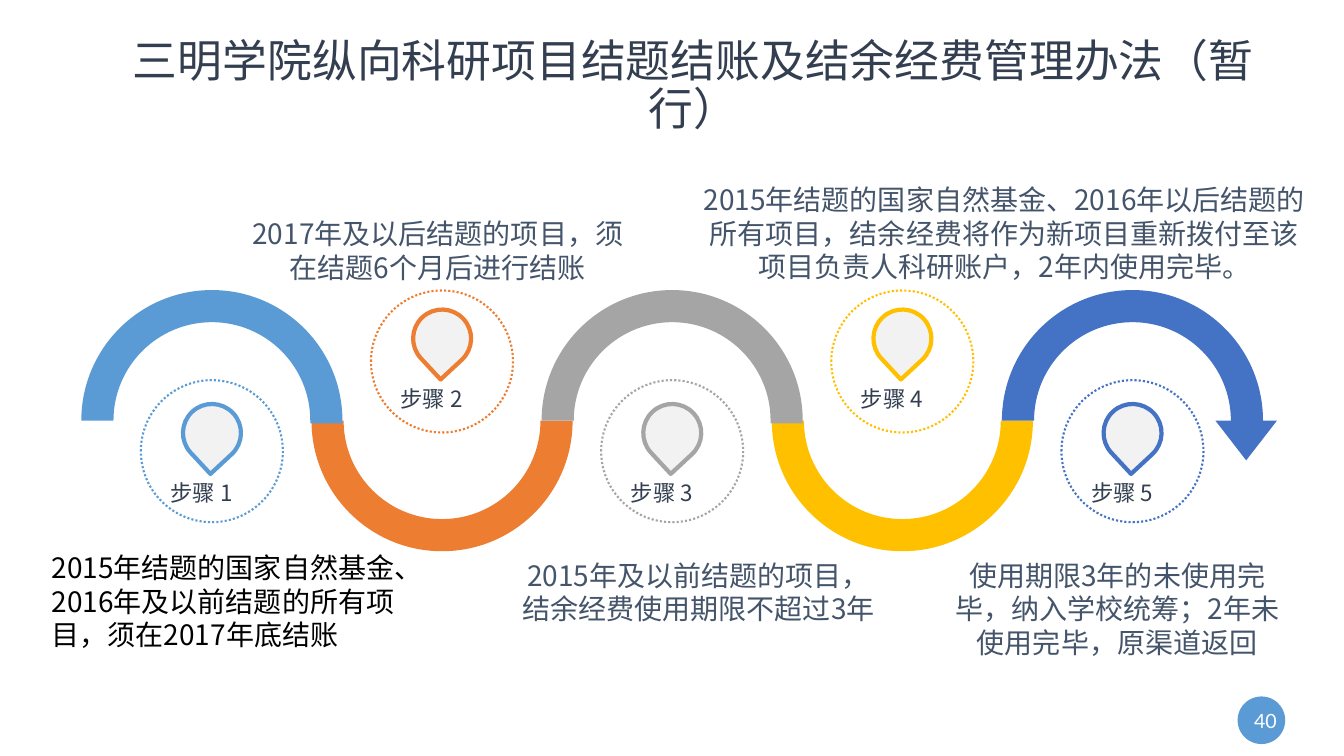
"""Build the five-step wave slide on closing research projects."""
from dataclasses import dataclass
from math import cos, radians, sin

from lxml import etree
from pptx import Presentation
from pptx.dml.color import RGBColor
from pptx.enum.dml import MSO_LINE
from pptx.enum.lang import MSO_LANGUAGE_ID
from pptx.enum.shapes import MSO_SHAPE
from pptx.enum.text import MSO_ANCHOR, MSO_AUTO_SIZE, PP_ALIGN
from pptx.oxml.ns import qn
from pptx.util import Cm, Pt

ELLIPSE = MSO_SHAPE.OVAL
TRIANGLE = MSO_SHAPE.ISOSCELES_TRIANGLE
DOTTED = MSO_LINE.ROUND_DOT
CHINESE = MSO_LANGUAGE_ID.SIMPLIFIED_CHINESE
LEFT, CENTER = PP_ALIGN.LEFT, PP_ALIGN.CENTER
MIDDLE, TOP = MSO_ANCHOR.MIDDLE, MSO_ANCHOR.TOP
FIT_SHAPE, NO_FIT = MSO_AUTO_SIZE.SHAPE_TO_FIT_TEXT, MSO_AUTO_SIZE.NONE


@dataclass(frozen=True)
class Theme:
    """Fonts, type sizes and colours of the slide."""
    font: str = "Noto Sans CJK SC"
    number_font: str = "Lato"
    title_size: int = 32
    caption_size: int = 20
    label_size: int = 16
    number_size: int = 14
    dark: str = "333F50"
    slate: str = "44546A"
    black: str = "000000"
    white: str = "FFFFFF"
    pin_fill: str = "F2F2F2"
    steps: tuple = ("5B9BD5", "ED7D31", "A5A5A5", "FFC000", "4472C4")


THEME = Theme()
STEP_PITCH = 5.8
FIRST_CENTER = 5.34
WAVE_Y = 10.6
OUTER_RADIUS, INNER_RADIUS = 3.29, 2.48
BAND_OVERLAP = 0.07
QUARTER_HANDLE = 0.5523
PIN_RADIUS = 0.73
PIN_TURN = 137.1
DIAL_SIZE = 3.58
LOW_DIAL, HIGH_DIAL = (11.37, 10.91), (9.11, 8.53)
CAPTIONS = (
    ("2015年结题的国家自然基金、2016年及以前结题的所有项目，须在2017年底结账",
     (1.17, 13.74, 9.68, 2.84), THEME.black, LEFT),
    ("2017年及以后结题的项目，须在结题6个月后进行结账",
     (5.89, 5.33, 10.29, 2.0), THEME.slate, CENTER),
    ("2015年及以前结题的项目，结余经费使用期限不超过3年",
     (12.93, 13.94, 9.35, 2.0), THEME.slate, CENTER),
    ("2015年结题的国家自然基金、2016年以后结题的所有项目，结余经费将作为新项目"
     "重新拨付至该项目负责人科研账户，2年内使用完毕。",
     (17.55, 4.47, 15.52, 2.84), THEME.slate, CENTER),
    ("使用期限3年的未使用完毕，纳入学校统筹；2年未使用完毕，原渠道返回",
     (23.67, 13.94, 8.97, 2.84), THEME.slate, CENTER),
)


def write_text(shape, text, *, size, color, font=THEME.font, align=CENTER,
               anchor=TOP, wrap=True, fit=FIT_SHAPE, spacing=None):
    """Put one formatted paragraph into a shape."""
    frame = shape.text_frame
    frame.word_wrap, frame.auto_size, frame.vertical_anchor = wrap, fit, anchor
    frame.margin_left = frame.margin_right = Cm(0.13)
    frame.margin_top = frame.margin_bottom = Cm(0.13)
    paragraph = frame.paragraphs[0]
    paragraph.alignment = align
    paragraph.line_spacing = spacing
    paragraph._p.get_or_add_pPr().set("hangingPunct", "0")
    run = paragraph.add_run()
    run.text = text
    run.font.size = Pt(size)
    run.font.name = font
    run.font.language_id = CHINESE
    run.font.color.rgb = RGBColor.from_string(color)
    etree.SubElement(run.font._element, qn("a:ea")).set("typeface", font)


def add_text(slide, text, box, **style):
    """Add a text box."""
    write_text(slide.shapes.add_textbox(*map(Cm, box)), text, **style)


def paint(shape, fill=None, line=None, width=1.5, dash=None):
    """Set fill and line, and remove the shadow."""
    shape.shadow.inherit = False
    if fill:
        shape.fill.solid()
        shape.fill.fore_color.rgb = RGBColor.from_string(fill)
    else:
        shape.fill.background()
    if line:
        shape.line.color.rgb = RGBColor.from_string(line)
        shape.line.width = Pt(width)
        shape.line.dash_style = dash
    else:
        shape.line.fill.background()


def add_preset(slide, kind, box, **colors):
    """Add a painted preset shape."""
    shape = slide.shapes.add_shape(kind, *map(Cm, box))
    paint(shape, **colors)
    return shape


def quarter_curves(center_x, center_y, radius, start, quarters):
    """Return Bezier triples for quarter turns, negative when anticlockwise."""
    turn = 1 if quarters > 0 else -1
    handle = turn * QUARTER_HANDLE
    curves = []
    for step in range(abs(quarters)):
        first = radians(start + 90 * turn * step)
        last = radians(start + 90 * turn * (step + 1))
        offsets = ((cos(first) - handle * sin(first), sin(first) + handle * cos(first)),
                   (cos(last) + handle * sin(last), sin(last) - handle * cos(last)),
                   (cos(last), sin(last)))
        curves.append([(center_x + radius * x, center_y + radius * y) for x, y in offsets])
    return curves


def add_outline(slide, start, segments, rotation=0, **colors):
    """Add a closed freeform of straight (one point) and curved (three point) segments."""
    points = [(Cm(x), Cm(y)) for segment in segments for x, y in segment]
    builder = slide.shapes.build_freeform(*map(Cm, start), scale=1.0)
    builder.add_line_segments(points, close=True)
    shape = builder.convert_to_shape()
    lines = iter(list(shape._element.iter(qn("a:lnTo"))))
    for segment in segments:
        first, *others = [next(lines) for _ in segment]
        if others:
            first.tag = qn("a:cubicBezTo")
            for line in others:
                first.append(line[0])
                line.getparent().remove(line)
    shape.rotation = rotation
    paint(shape, **colors)


def add_wave_band(slide, center_x, color, lower=False):
    """Add one half ring of the wave, turned over when it is a lower one."""
    center_y = WAVE_Y + OUTER_RADIUS if lower else WAVE_Y
    segments = quarter_curves(center_x, center_y, OUTER_RADIUS, 180, 2)
    if not lower:
        segments += [[(center_x + radius, center_y + BAND_OVERLAP)]
                     for radius in (OUTER_RADIUS, INNER_RADIUS)]
    segments.append([(center_x + INNER_RADIUS, center_y)])
    segments += quarter_curves(center_x, center_y, INNER_RADIUS, 360, -2)
    add_outline(slide, (center_x - OUTER_RADIUS, center_y), segments,
                rotation=180 if lower else 0, fill=color)


def add_wave(slide, centers):
    """Add the lower half rings, the upper ones over them, and the arrowhead."""
    for index in (1, 3, 0, 2, 4):
        add_wave_band(slide, centers[index], THEME.steps[index], lower=index % 2 == 1)
    head = add_preset(slide, TRIANGLE, (30.63, WAVE_Y, 1.55, 1.0), fill=THEME.steps[-1])
    head.rotation = 180


def add_step(slide, number, center_x, color):
    """Add the dotted dial, pin and label of a step."""
    dial_y, pin_y = LOW_DIAL if number % 2 else HIGH_DIAL
    tip = (center_x + PIN_RADIUS, pin_y - PIN_RADIUS)
    pin = quarter_curves(center_x, pin_y, PIN_RADIUS, 0, 3) + [[tip]]
    add_outline(slide, (center_x + PIN_RADIUS, pin_y), pin, rotation=PIN_TURN,
                fill=THEME.pin_fill, line=color, width=3)
    dial = (center_x - DIAL_SIZE / 2, dial_y - DIAL_SIZE / 2, DIAL_SIZE, DIAL_SIZE)
    add_preset(slide, ELLIPSE, dial, line=color, dash=DOTTED)
    add_text(slide, f"步骤 {number}", (center_x - 1.2, pin_y + 1.04, 1.88, 0.94),
             size=THEME.label_size, color=THEME.dark, wrap=False)


def main():
    """Build and save the slide."""
    presentation = Presentation()
    presentation.slide_width, presentation.slide_height = Cm(33.87), Cm(19.05)
    slide = presentation.slides.add_slide(presentation.slide_layouts[5])
    title = slide.shapes.title
    title.left, title.top, title.width, title.height = map(Cm, (2.33, 0.9, 30.3, 2.57))
    write_text(title, "三明学院纵向科研项目结题结账及结余经费管理办法（暂行）",
               size=THEME.title_size, color=THEME.dark, anchor=MIDDLE,
               fit=NO_FIT, spacing=0.9)
    centers = [FIRST_CENTER + STEP_PITCH * i for i in range(len(THEME.steps))]
    add_wave(slide, centers)
    for number, (center_x, color) in enumerate(zip(centers, THEME.steps), 1):
        add_step(slide, number, center_x, color)
    for text, box, color, align in CAPTIONS:
        add_text(slide, text, box, size=THEME.caption_size, color=color, align=align)
    add_preset(slide, ELLIPSE, (31.19, 17.55, 1.2, 1.2), fill=THEME.steps[0])
    add_text(slide, "40", (31.37, 17.73, 1.04, 0.84), size=THEME.number_size,
             color=THEME.white, font=THEME.number_font)
    presentation.save("out.pptx")


if __name__ == "__main__":
    main()
